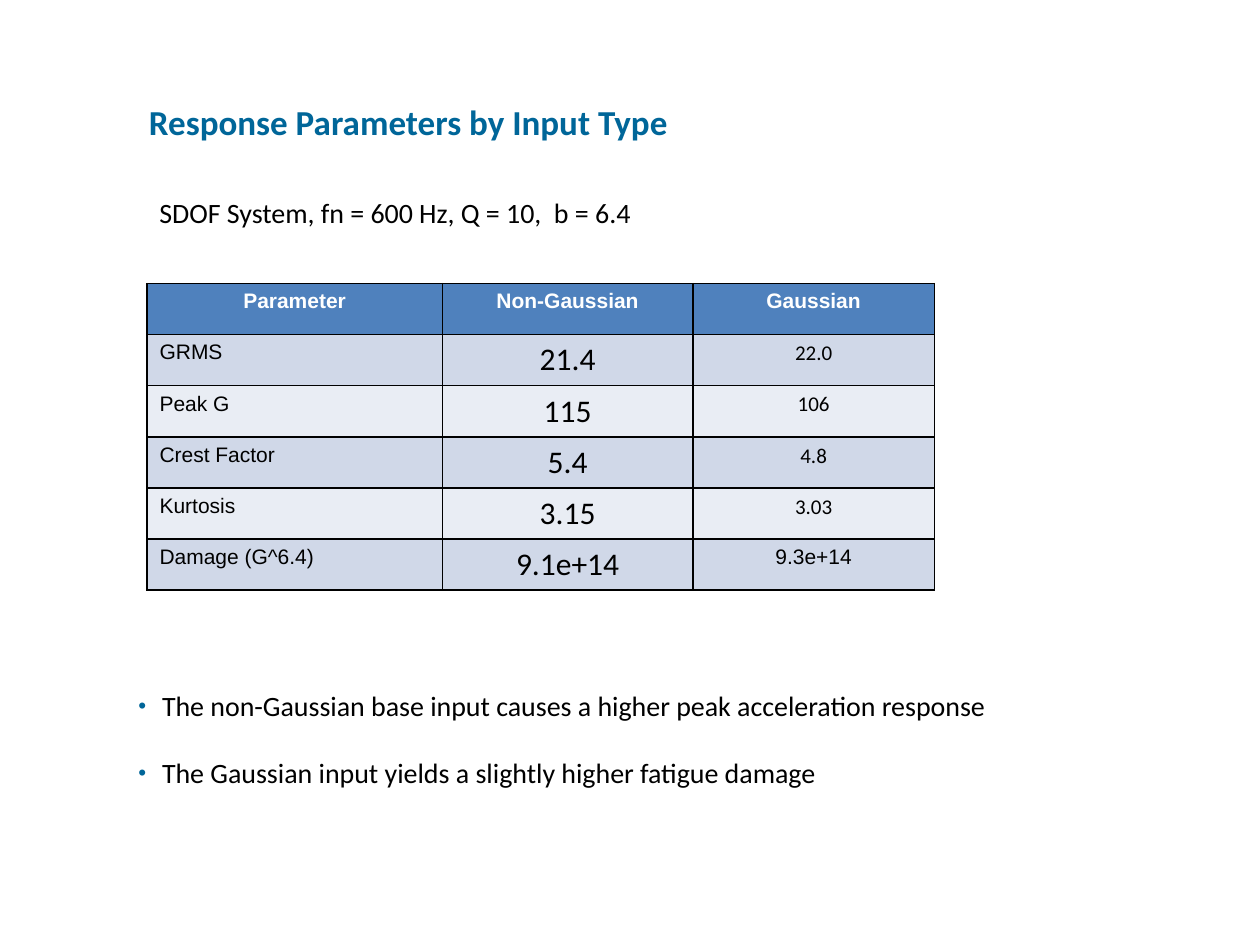
from lxml import etree
from pptx import Presentation
from pptx.dml.color import RGBColor
from pptx.enum import text
from pptx.oxml.ns import qn
from pptx.util import Pt

# Content
TITLE = "Response Parameters by Input Type"
SYSTEM = "SDOF System, fn = 600 Hz, Q = 10,  b = 6.4"
PARAMETERS = [
    ("Parameter", "Non-Gaussian", "Gaussian"),
    ("GRMS", "21.4", "22.0"),
    ("Peak G", "115", "106"),
    ("Crest Factor", "5.4", "4.8"),
    ("Kurtosis", "3.15", "3.03"),
    ("Damage (G^6.4)", "9.1e+14", "9.3e+14"),
]
FINDINGS = [
    "The non-Gaussian base input causes a higher peak acceleration response",
    "The Gaussian input yields a slightly higher fatigue damage",
]

# Formats
COLORS = {"accent": "006699", "ink": "000000", "header": "4F81BD",
          "header_text": "FFFFFF", "odd": "D0D8E8", "even": "E9EDF4"}
TITLE_FORMAT = {"name": "Calibri", "size": Pt(20), "bold": True}
BODY_FORMAT = {"name": "Calibri", "size": Pt(16), "bold": False}
HEADER_FORMAT = {"name": "Arial", "size": Pt(12), "bold": True}
COLUMN_FORMATS = [
    {"name": "Arial", "size": Pt(12), "bold": False},
    {"name": "Calibri", "size": Pt(18), "bold": False},
    {"name": "Calibri", "size": Pt(12), "bold": False},
]
DAMAGE_FORMAT = COLUMN_FORMATS[0]
COLUMN_WIDTHS = [168.8, 143.2, 138]
ROW_HEIGHT = 29.2
BULLET_INDENT = 13.5


def write(paragraph, words, values, color):
    run = paragraph.add_run()
    run.text = words
    for attribute, value in values.items():
        setattr(run.font, attribute, value)
    run.font.color.rgb = RGBColor.from_string(COLORS[color])


def add_text(slide, box, lines, values, color):
    frame = slide.shapes.add_textbox(*map(Pt, box)).text_frame
    frame.word_wrap = True
    for index, line in enumerate(lines):
        paragraph = frame.add_paragraph() if index else frame.paragraphs[0]
        write(paragraph, line, values, color)
    return frame


def add_bullet(paragraph):
    properties = paragraph._p.get_or_add_pPr()
    properties.set("marL", str(Pt(BULLET_INDENT)))
    properties.set("indent", str(-Pt(BULLET_INDENT)))
    bullet_color = etree.SubElement(properties, qn("a:buClr"))
    etree.SubElement(bullet_color, qn("a:srgbClr"), val=COLORS["accent"])
    etree.SubElement(properties, qn("a:buSzPct"), val="80000")
    etree.SubElement(properties, qn("a:buFont"), typeface="Arial")
    etree.SubElement(properties, qn("a:buChar"), char="•")


def add_borders(cell):
    properties = cell._tc.get_or_add_tcPr()
    for index, side in enumerate(("lnL", "lnR", "lnT", "lnB")):
        line = etree.Element(qn("a:" + side), w=str(Pt(1)))
        fill = etree.SubElement(line, qn("a:solidFill"))
        etree.SubElement(fill, qn("a:srgbClr"), val=COLORS["ink"])
        properties.insert(index, line)


def add_parameters(slide):
    rows, columns = len(PARAMETERS), len(COLUMN_WIDTHS)
    table = slide.shapes.add_table(
        rows, columns, Pt(84), Pt(162),
        Pt(sum(COLUMN_WIDTHS)), Pt(rows * ROW_HEIGHT)).table
    for column, width in zip(table.columns, COLUMN_WIDTHS):
        column.width = Pt(width)
    for r, values in enumerate(PARAMETERS):
        table.rows[r].height = Pt(ROW_HEIGHT)
        band = "header" if r == 0 else "odd" if r % 2 else "even"
        for c, value in enumerate(values):
            cell = table.cell(r, c)
            cell.fill.solid()
            cell.fill.fore_color.rgb = RGBColor.from_string(COLORS[band])
            add_borders(cell)
            style = HEADER_FORMAT if r == 0 else COLUMN_FORMATS[c]
            if (r, c) == (rows - 1, columns - 1):
                style = DAMAGE_FORMAT
            paragraph = cell.text_frame.paragraphs[0]
            if r == 0 or c > 0:
                paragraph.alignment = text.PP_ALIGN.CENTER
            write(paragraph, value, style, "ink" if r else "header_text")


def main():
    deck = Presentation()
    deck.slide_width, deck.slide_height = Pt(720), Pt(540)
    slide = deck.slides.add_slide(deck.slide_layouts[6])

    # Title and system description
    add_text(slide, (78, 54, 552, 31.5), [TITLE], TITLE_FORMAT, "accent")
    add_text(slide, (84, 108, 396, 26.6), [SYSTEM], BODY_FORMAT, "ink")

    # Response parameters
    add_parameters(slide)

    # Findings
    findings = add_text(slide, (72, 390, 552, 65.5), FINDINGS, BODY_FORMAT, "ink")
    for index, paragraph in enumerate(findings.paragraphs):
        if index:
            paragraph.space_before = Pt(19)
        add_bullet(paragraph)

    deck.save("out.pptx")


if __name__ == "__main__":
    main()
